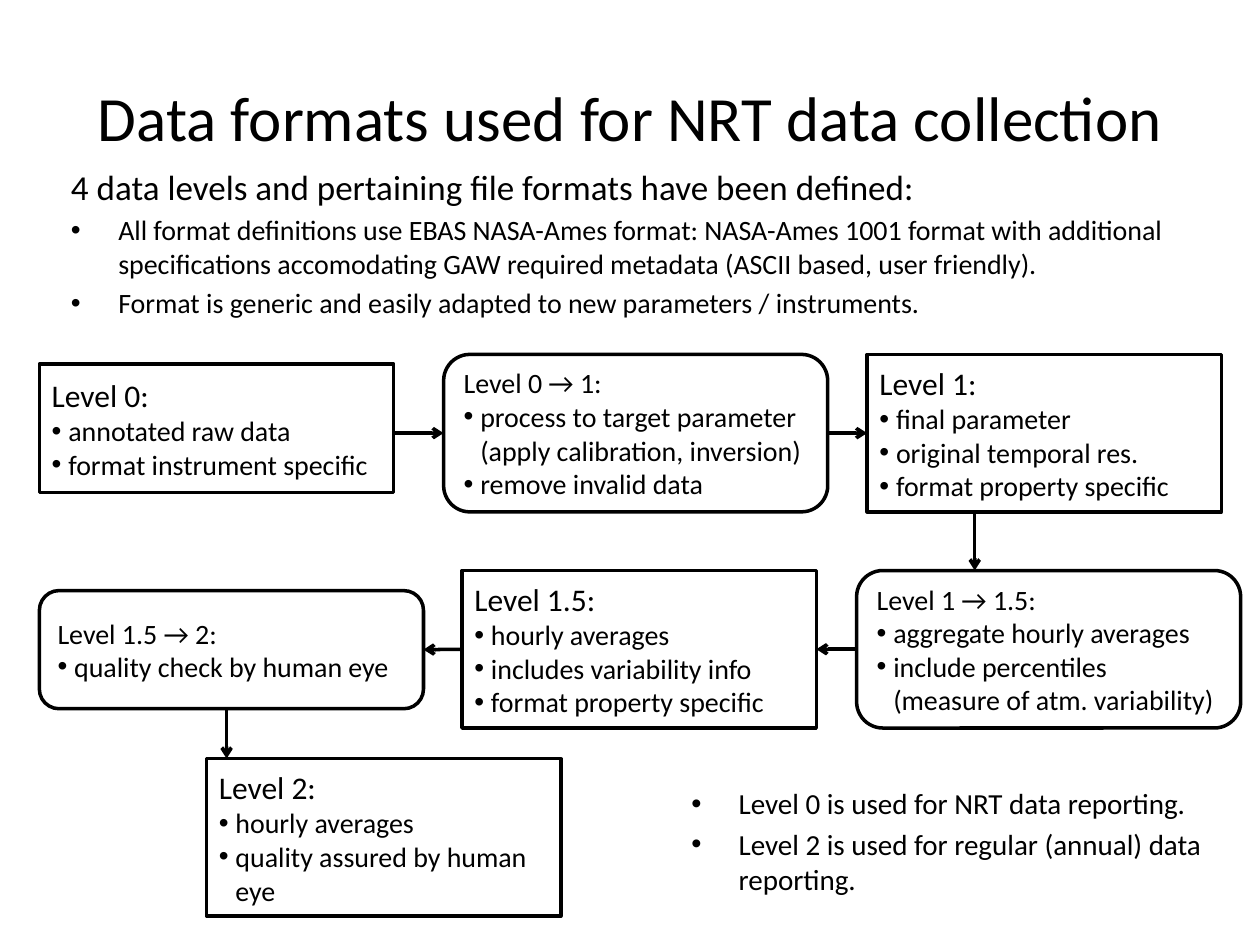
from pptx import Presentation
from pptx import util as u
from pptx.dml.color import RGBColor
from pptx.enum import shapes, text
from pptx.oxml.ns import qn
from lxml import etree

Pt = u.Pt
BLACK = "000000"


def color(hex_value):
    return RGBColor.from_string(hex_value)


def add_line(frame, index, words, size, indent=0, bullet=False, before=0):
    line = frame.paragraphs[0] if index == 0 else frame.add_paragraph()
    line.alignment = text.PP_ALIGN.LEFT
    line.space_before = Pt(before)
    props = line._p.get_or_add_pPr()
    props.set("marL", str(Pt(indent)))
    props.set("indent", str(-Pt(indent)))
    if bullet:
        etree.SubElement(props, qn("a:buFont"), typeface="Arial")
        etree.SubElement(props, qn("a:buChar"), char="•")
    for part_index, part in enumerate(words.split("\n")):
        if part_index:
            line.add_line_break()
        run = line.add_run()
        run.text = part
        run.font.size = Pt(size)
        run.font.name = "Calibri"
        run.font.color.rgb = color(BLACK)
    return line


prs = Presentation()
prs.slide_width, prs.slide_height = Pt(720), Pt(540)
slide = prs.slides.add_slide(prs.slide_layouts[6])

passages = [
    (36, 21.5, 648, 90, [("Data formats used for NRT data collection", 36, False)]),
    (388, 445.5, 320.5, 66, [
        ("Level 0 is used for NRT data reporting.", 16.6, True),
        ("Level 2 is used for regular (annual) data reporting.", 16.6, True),
    ]),
    (33.5, 91, 648, 100, [
        ("4 data levels and pertaining file formats have been defined:", 20, False),
        ("All format definitions use EBAS NASA-Ames format: NASA-Ames 1001 format with "
         "additional specifications accomodating GAW required metadata "
         "(ASCII based, user friendly).", 16, True),
        ("Format is generic and easily adapted to new parameters / instruments.", 16, True),
    ]),
]
for left, top, width, height, lines in passages:
    frame = slide.shapes.add_textbox(Pt(left), Pt(top), Pt(width), Pt(height)).text_frame
    frame.word_wrap = True
    if lines[0][1] == 36:
        frame.vertical_anchor = text.MSO_ANCHOR.MIDDLE
        add_line(frame, 0, lines[0][0], 36).alignment = text.PP_ALIGN.CENTER
        continue
    for index, (words, size, bullet) in enumerate(lines):
        add_line(frame, index, words, size, 27, bullet, 0.2 * size)

LEVEL = (shapes.MSO_SHAPE.RECTANGLE, 202.5, 18)
STEP = (shapes.MSO_SHAPE.ROUNDED_RECTANGLE, 219.5, 16)
stages = [
    ("Level 0", LEVEL, 22.5, 208, 73.5,
     ["annotated raw data", "format instrument specific"]),
    ("Level 0 → 1", STEP, 253.5, 202.5, 90,
     ["process to target parameter\n(apply calibration, inversion)", "remove invalid data"]),
    ("Level 1", LEVEL, 495.5, 202.5, 90,
     ["final parameter", "original temporal res.", "format property specific"]),
    ("Level 1 → 1.5", STEP, 489.5, 326, 90,
     ["aggregate hourly averages", "include percentiles\n(measure of atm. variability)"]),
    ("Level 1.5", LEVEL, 264, 326, 90,
     ["hourly averages", "includes variability info", "format property specific"]),
    ("Level 1.5 → 2", STEP, 22.5, 337.5, 67.5, ["quality check by human eye"]),
    ("Level 2", LEVEL, 118, 433.5, 90,
     ["hourly averages", "quality assured by human\neye"]),
]
boxes = {}
for heading, (outline, width, heading_size), left, top, height, points in stages:
    box = slide.shapes.add_shape(outline, Pt(left), Pt(top), Pt(width), Pt(height))
    box.shadow.inherit = False
    box.fill.background()
    box.line.color.rgb = color(BLACK)
    box.line.width = Pt(2)
    frame = box.text_frame
    frame.word_wrap = True
    frame.vertical_anchor = text.MSO_ANCHOR.MIDDLE
    add_line(frame, 0, heading + ":", heading_size)
    for index, point in enumerate(points, 1):
        add_line(frame, index, point, 16, 9.5, True)
    boxes[heading] = box

flows = [
    ("Level 0", None, "Level 0 → 1", 1, (225, 247.5, 253.5, 247.5)),
    ("Level 0 → 1", 3, "Level 1", 1, (473, 247.5, 495.5, 247.5)),
    ("Level 1", None, "Level 1 → 1.5", None, (557, 292.5, 557, 326)),
    ("Level 1 → 1.5", 1, "Level 1.5", 3, (489.5, 371, 466.5, 371)),
    ("Level 1.5", 1, "Level 1.5 → 2", 3, (264, 371, 242, 371)),
    ("Level 1.5 → 2", None, "Level 2", None, (129.5, 405, 129.5, 433.5)),
]
for source, source_side, target, target_side, ends in flows:
    arrow = slide.shapes.add_connector(
        shapes.MSO_CONNECTOR.STRAIGHT, *[Pt(end) for end in ends])
    if source_side is not None:
        arrow.begin_connect(boxes[source], source_side)
    if target_side is not None:
        arrow.end_connect(boxes[target], target_side)
    arrow.line.color.rgb = color(BLACK)
    arrow.line.width = Pt(2)
    etree.SubElement(arrow.line._get_or_add_ln(), qn("a:tailEnd"), type="arrow")
    etree.SubElement(arrow._element.spPr, qn("a:effectLst"))

prs.save("out.pptx")
